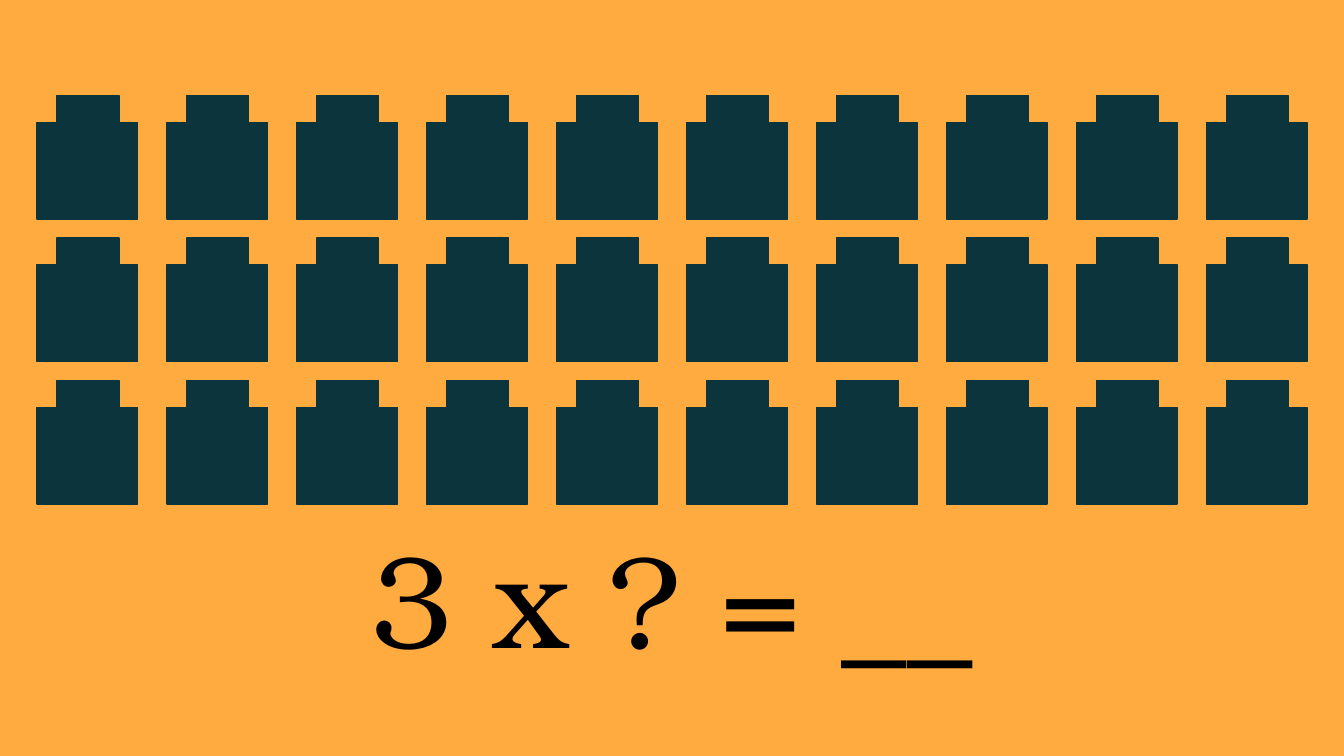
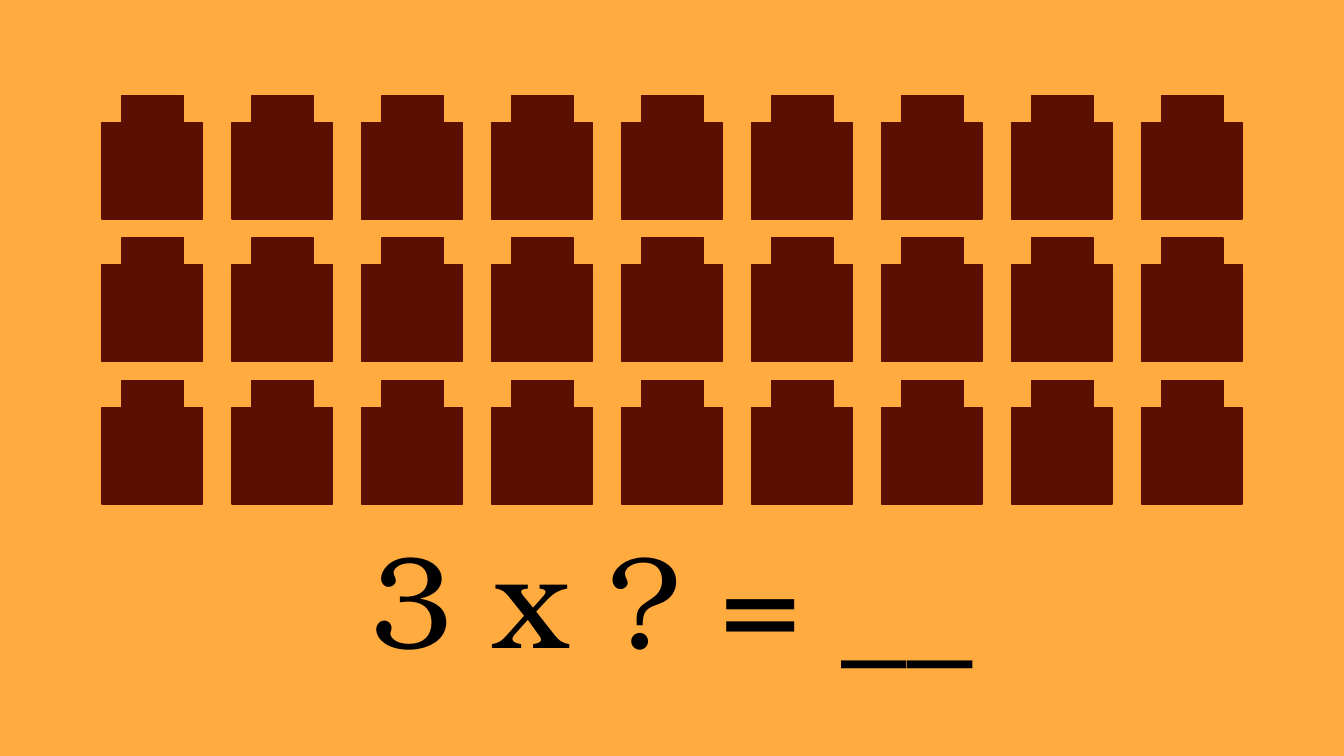
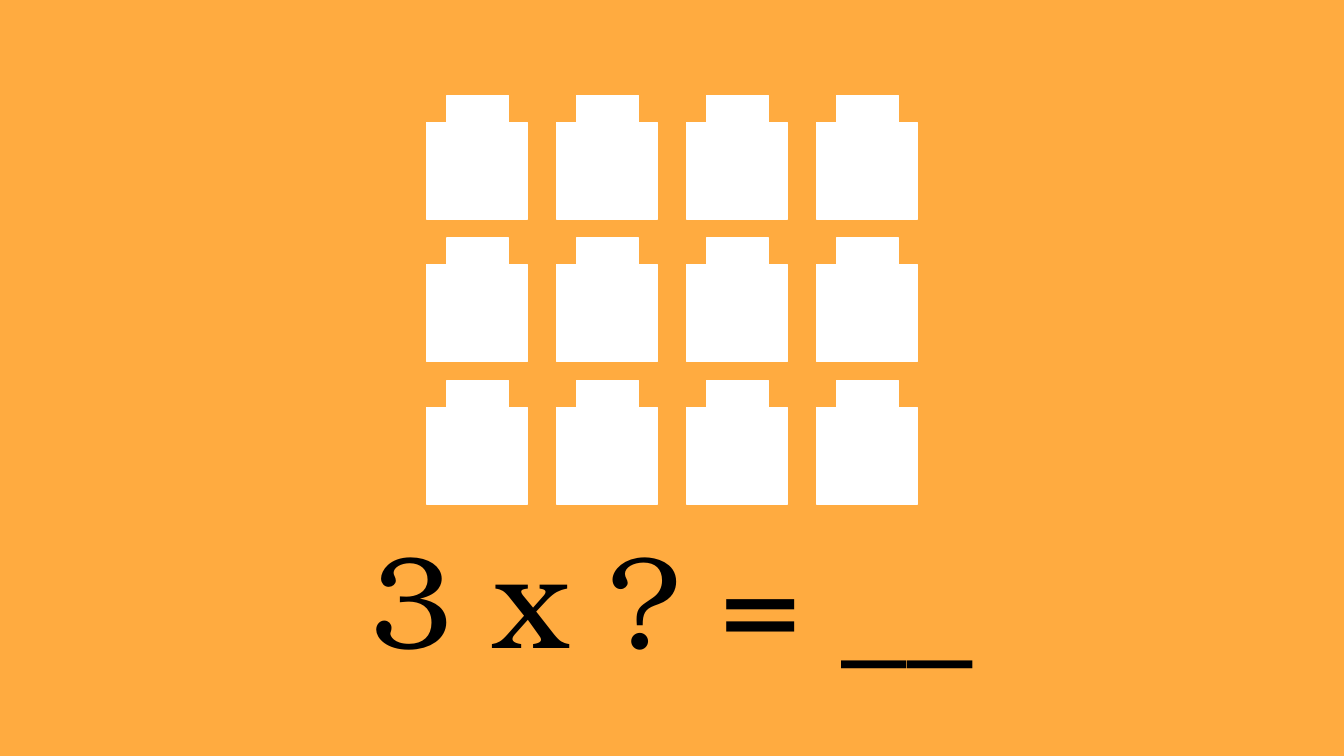
from pptx import Presentation
from pptx import util as u
from pptx.dml.color import RGBColor
from pptx.enum import shapes, text

ORANGE = RGBColor(0xFF, 0xAB, 0x40)
TEAL = RGBColor(0x0C, 0x34, 0x3D)
MAROON = RGBColor(0x5B, 0x0F, 0x00)
WHITE = RGBColor(0xFF, 0xFF, 0xFF)
BLACK = RGBColor(0x00, 0x00, 0x00)

SLIDE_WIDTH = 10
SLIDE_HEIGHT = SLIDE_WIDTH * 9 / 16
ROWS = 3
BLOCK_TOP = 0.71
BODY_WIDTH, BODY_HEIGHT = 0.75, 0.72
STUD_WIDTH, STUD_HEIGHT, STUD_INSET = 0.46, 0.2, 0.15
COLUMN_PITCH = 8.7 / 9
ROW_PITCH = 1.06

EQUATION = "3 x ? = __"
EQUATION_FONT = {"name": "TeX Gyre Bonum", "size": u.Pt(70)}
EQUATION_FRAME = {
    "word_wrap": True,
    "auto_size": text.MSO_AUTO_SIZE.SHAPE_TO_FIT_TEXT,
    "vertical_anchor": text.MSO_ANCHOR.TOP,
    **{f"margin_{side}": u.Inches(0.1) for side in ("left", "top", "right", "bottom")},
}
BLOCK_GRIDS = [(10, TEAL), (9, MAROON), (4, WHITE)]


def apply_format(target, values):
    for name, value in values.items():
        setattr(target, name, value)


def add_slide(presentation):
    slide = presentation.slides.add_slide(presentation.slide_layouts[6])
    slide.background.fill.solid()
    slide.background.fill.fore_color.rgb = ORANGE
    return slide


def add_equation(slide):
    box = slide.shapes.add_textbox(
        u.Inches(0), u.Inches(3.75), u.Inches(SLIDE_WIDTH), u.Inches(1.38))
    apply_format(box.text_frame, EQUATION_FRAME)
    paragraph = box.text_frame.paragraphs[0]
    paragraph.alignment = text.PP_ALIGN.CENTER
    run = paragraph.add_run()
    run.text = EQUATION
    apply_format(run.font, EQUATION_FONT)
    run.font.color.rgb = BLACK


def add_rectangle(slide, left, top, width, height, color):
    shape = slide.shapes.add_shape(
        shapes.MSO_SHAPE.RECTANGLE,
        u.Inches(left), u.Inches(top), u.Inches(width), u.Inches(height))
    shape.shadow.inherit = False
    shape.fill.solid()
    shape.fill.fore_color.rgb = color
    shape.line.color.rgb = color
    shape.line.width = u.Pt(0.75)


def add_block(slide, left, top, color):
    add_rectangle(slide, left, top + STUD_HEIGHT, BODY_WIDTH, BODY_HEIGHT, color)
    add_rectangle(slide, left + STUD_INSET, top, STUD_WIDTH, STUD_HEIGHT, color)


def add_block_grid(slide, columns, color):
    grid_width = (columns - 1) * COLUMN_PITCH + BODY_WIDTH
    grid_left = (SLIDE_WIDTH - grid_width) / 2
    for column in range(columns):
        for row in range(ROWS):
            add_block(slide, grid_left + column * COLUMN_PITCH,
                      BLOCK_TOP + row * ROW_PITCH, color)


def main():
    presentation = Presentation()
    presentation.slide_width = u.Inches(SLIDE_WIDTH)
    presentation.slide_height = u.Inches(SLIDE_HEIGHT)
    for columns, color in BLOCK_GRIDS:
        slide = add_slide(presentation)
        add_equation(slide)
        add_block_grid(slide, columns, color)
    presentation.save("out.pptx")


if __name__ == "__main__":
    main()
